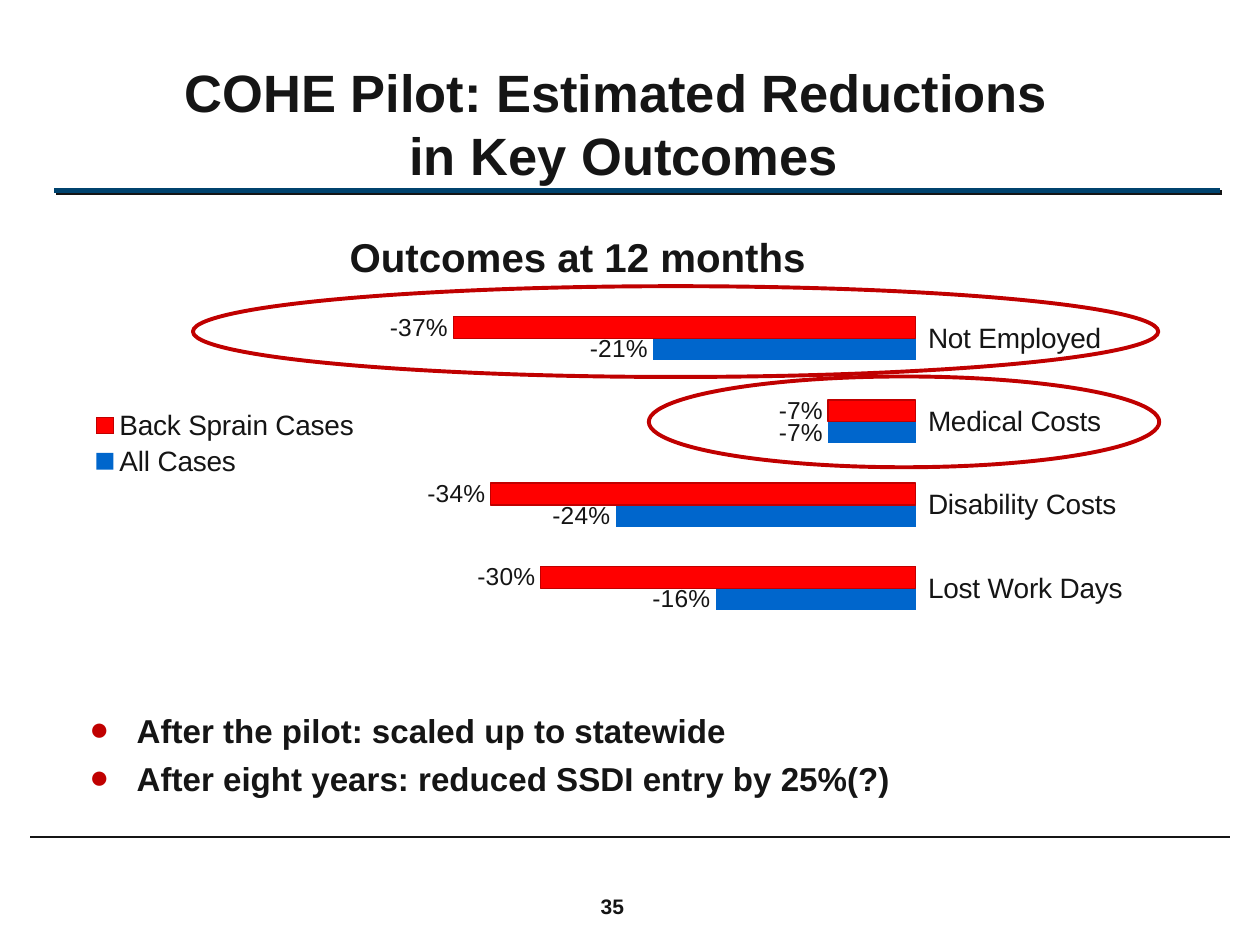
from lxml import etree
from pptx import Presentation, util as u
from pptx.chart.data import CategoryChartData
from pptx.dml.color import RGBColor as Rgb
from pptx.enum import chart as ch, shapes as sh, text as tx
from pptx.oxml import parse_xml
from pptx.oxml.ns import nsdecls, qn

THEME = dict(
    font="Arial", ink="151515", blue="0066CC", red="FF0000", dark="C00000", rule="00436E",
    title=30, sub=23, body=18.9, axis=16, label=14, num=12,
)
TITLE = "COHE Pilot: Estimated Reductions \vin Key Outcomes"
SUB = "Outcomes at 12 months"
POINTS = [
    "After the pilot: scaled up to statewide",
    "After eight years: reduced SSDI entry by 25%(?)",
]
CATS = ["Lost Work Days", "Disability Costs", "Medical Costs", "Not Employed"]
SERIES = [
    ("All Cases", (-0.16, -0.24, -0.07, -0.21), "blue", None),
    ("Back Sprain Cases", (-0.30, -0.34, -0.07, -0.37), "red", "dark"),
]
PLOT = dict(x=0.307, y=0.107, w=0.453, h=0.893)
RINGS = [(3.89, 5.77, 19.46, 1.83), (13.08, 7.59, 10.29, 1.83)]
RULES = [(1.09, 24.59, 3.84, "rule", 3, True), (0.61, 24.79, 16.87, "ink", 1.5, False)]
SHADE = ('<a:outerShdw dist="17780" dir="2700000" algn="ctr" rotWithShape="0">'
         f'<a:srgbClr val="{THEME["ink"]}"/></a:outerShdw>')


def tone(name):
    return Rgb.from_string(THEME[name])


def put(obj, **vals):
    for key, val in vals.items():
        setattr(obj, key, val)


def style(font, size, bold=False):
    put(font, name=THEME["font"], size=u.Pt(THEME[size]), bold=bold)
    font.color.rgb = tone("ink")


def place(shape, *box):
    put(shape, **dict(zip(("left", "top", "width", "height"), map(u.Cm, box))))


def write(shape, lines, size, anchor, align, **para):
    frame = shape.text_frame
    put(frame, word_wrap=True, auto_size=tx.MSO_AUTO_SIZE.NONE, vertical_anchor=anchor)
    for i, line in enumerate(lines):
        p = frame.paragraphs[0] if i == 0 else frame.add_paragraph()
        p.text = line
        put(p, alignment=align, **para)
        if i == 0:
            p.space_before = u.Pt(0)
        for run in p.runs:
            style(run.font, size, True)
    return frame


def bullet(p):
    props = p._p.get_or_add_pPr()
    props.set("marL", str(u.Cm(0.95)))
    props.set("indent", str(-u.Cm(0.95)))
    props.append(parse_xml(f'<a:buClr {nsdecls("a")}><a:srgbClr val="{THEME["dark"]}"/></a:buClr>'))
    props.append(parse_xml(f'<a:buChar {nsdecls("a")} char="●"/>'))


def draw_rule(slide, x1, x2, y, color, width, shade):
    line = slide.shapes.add_connector(
        sh.MSO_CONNECTOR.STRAIGHT, u.Cm(x1), u.Cm(y), u.Cm(x2), u.Cm(y))
    line.line.color.rgb = tone(color)
    line.line.width = u.Pt(width)
    line._element.spPr.append(parse_xml(
        f'<a:effectLst {nsdecls("a")}>{SHADE if shade else ""}</a:effectLst>'))


def draw_ring(slide, *box):
    ring = slide.shapes.add_shape(sh.MSO_SHAPE.OVAL, *map(u.Cm, box))
    ring.shadow.inherit = False
    ring.fill.background()
    ring.line.color.rgb = tone("dark")
    ring.line.width = u.Pt(2.25)


def set_plot(chart):
    area = chart._chartSpace.chart.plotArea
    for old in area.findall(qn("c:layout")):
        area.remove(old)
    lay = etree.Element(qn("c:layout"))
    man = etree.SubElement(lay, qn("c:manualLayout"))
    vals = dict(layoutTarget="inner", xMode="edge", yMode="edge", **PLOT)
    for key, val in vals.items():
        etree.SubElement(man, qn("c:" + key)).set("val", str(val))
    area.insert(0, lay)


def draw_chart(slide):
    data = CategoryChartData(number_format="0%")
    data.categories = CATS
    for name, vals, *_ in SERIES:
        data.add_series(name, vals)
    chart = slide.shapes.add_chart(
        ch.XL_CHART_TYPE.BAR_CLUSTERED, *map(u.Cm, (1.55, 5.18, 22.25, 7.52)), data).chart
    put(chart, has_title=False, has_legend=True)
    style(chart.font, "label")
    put(chart.legend, position=ch.XL_LEGEND_POSITION.LEFT, include_in_layout=False)
    style(chart.legend.font, "axis")
    cat, val = chart.category_axis, chart.value_axis
    put(cat, major_tick_mark=ch.XL_TICK_MARK.NONE, minor_tick_mark=ch.XL_TICK_MARK.NONE,
        tick_label_position=ch.XL_TICK_LABEL_POSITION.HIGH, has_major_gridlines=False)
    cat.format.line.fill.background()
    style(cat.tick_labels.font, "axis")
    put(val, minimum_scale=-0.4, maximum_scale=0, has_major_gridlines=False, visible=False)
    val.tick_labels.number_format = "0%"
    val.tick_labels.number_format_is_linked = False
    plot = chart.plots[0]
    put(plot, gap_width=182, overlap=0, vary_by_categories=False)
    for ser, (_, _, fill, edge) in zip(plot.series, SERIES):
        ser.invert_if_negative = False
        ser.format.fill.solid()
        ser.format.fill.fore_color.rgb = tone(fill)
        if edge:
            ser.format.line.color.rgb = tone(edge)
            ser.format.line.width = u.Pt(0.75)
        labels = ser.data_labels
        put(labels, show_value=True, number_format="0%", number_format_is_linked=False,
            position=ch.XL_LABEL_POSITION.OUTSIDE_END)
        style(labels.font, "label")
    set_plot(chart)


def main():
    prs = Presentation()
    put(prs, slide_width=u.Cm(25.4), slide_height=u.Cm(19.05))
    slide = prs.slides.add_slide(prs.slide_layouts[1])
    top, mid, low = (tx.MSO_ANCHOR.TOP, tx.MSO_ANCHOR.MIDDLE, tx.MSO_ANCHOR.BOTTOM)
    left, center = tx.PP_ALIGN.LEFT, tx.PP_ALIGN.CENTER

    for rule in RULES:
        draw_rule(slide, *rule)
    title, body = slide.shapes.title, slide.placeholders[1]
    place(title, 0.84, 0.69, 23.47, 3.18)
    write(title, [TITLE], "title", low, center)
    place(body, 1.55, 14.53, 22.25, 2.11)
    frame = write(body, POINTS, "body", top, left, line_spacing=0.7,
                  space_before=u.Pt(6), space_after=u.Pt(6))
    frame.margin_top = 0
    for p in frame.paragraphs:
        bullet(p)
    draw_chart(slide)
    for box, line, size, align in (
        ((0.53, 4.6, 22.25, 1.14), SUB, "sub", center),
        ((11.86, 17.88, 1.45, 0.76), "35", "num", left),
    ):
        write(slide.shapes.add_textbox(*map(u.Cm, box)), [line], size, mid, align)
    for ring in RINGS:
        draw_ring(slide, *ring)
    prs.save("out.pptx")


if __name__ == "__main__":
    main()
